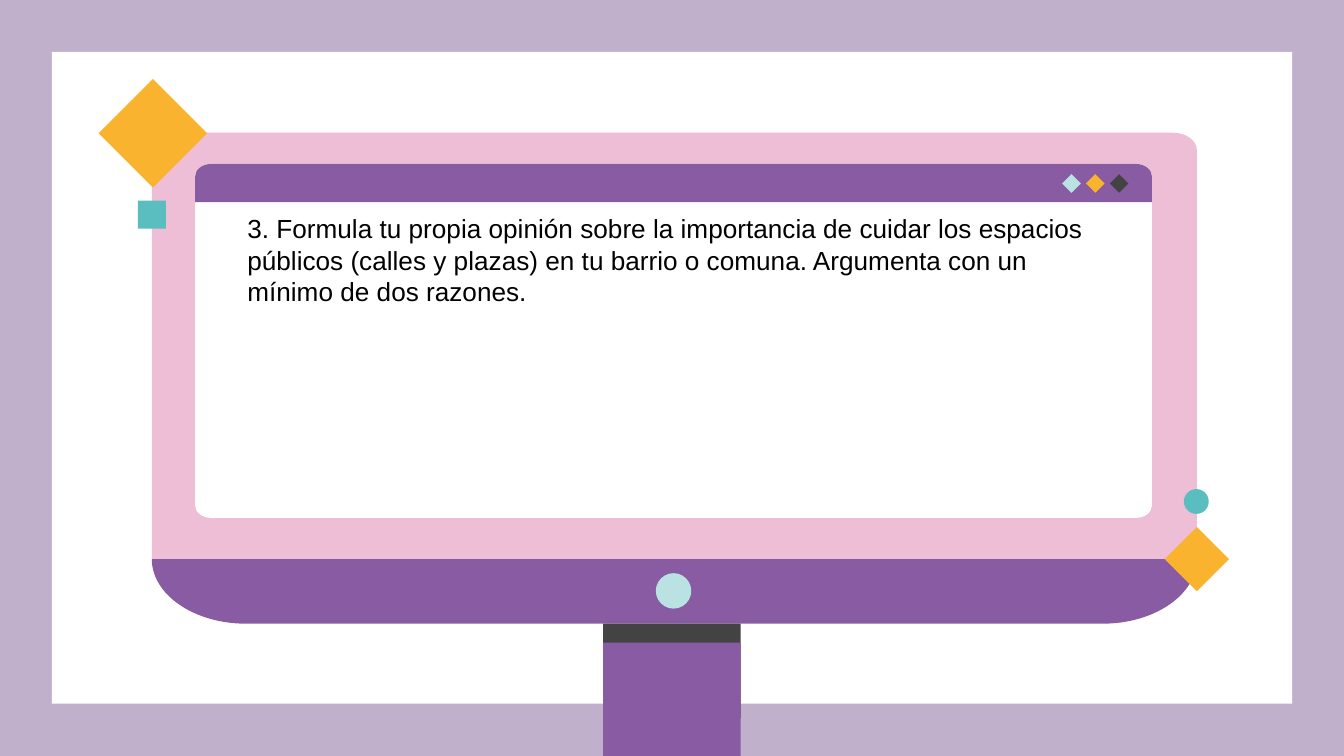
from lxml import etree
from pptx import Presentation
from pptx.dml.color import RGBColor
from pptx.enum import shapes, text
from pptx.oxml.ns import qn
from pptx.util import Cm, Pt

LILAC = RGBColor(0xC0, 0xB0, 0xCC)
WHITE = RGBColor(0xFF, 0xFF, 0xFF)
PINK = RGBColor(0xEE, 0xBD, 0xD6)
PURPLE = RGBColor(0x88, 0x5B, 0xA2)
MINT = RGBColor(0xBB, 0xE2, 0xE2)
TEAL = RGBColor(0x5A, 0xBE, 0xC0)
AMBER = RGBColor(0xFA, 0xB3, 0x2E)
DARK = RGBColor(0x43, 0x43, 0x43)
BLACK = RGBColor(0, 0, 0)
RECT = shapes.MSO_SHAPE.RECTANGLE
OVAL = shapes.MSO_SHAPE.OVAL
ARC = 0.55  # control point share for a quarter ellipse

deck = Presentation()
deck.slide_width, deck.slide_height = Cm(25.4), Cm(14.29)
slide = deck.slides.add_slide(deck.slide_layouts[5])
slide.background.fill.solid()
slide.background.fill.fore_color.rgb = LILAC


def paint(shape, color):
    shape.fill.solid()
    shape.fill.fore_color.rgb = color
    shape.line.fill.background()
    shape.shadow.inherit = False


def panel(x, y, w, h, color, rx, ry, ends):
    """Draw a box whose corners at the named ends (top, low) are elliptical."""
    dots, bends = [], {}
    for cx, cy, end in [(w, h, "low"), (0, h, "low"), (0, 0, "top"), (w, 0, "top")]:
        if end not in ends:
            dots.append((cx, cy))
            continue
        side = (cx, cy - ry if cy else ry)
        edge = (cx - rx if cx else rx, cy)
        first, last = (side, edge) if (cx > 0) == (cy > 0) else (edge, side)
        bends[len(dots)] = [(p[0] + (cx - p[0]) * ARC, p[1] + (cy - p[1]) * ARC)
                            for p in (first, last)]
        dots += [first, last]
    spots = [(Cm(x + a), Cm(y + b)) for a, b in dots]
    pen = slide.shapes.build_freeform(*spots[0])
    pen.add_line_segments(spots[1:], close=True)
    shape = pen.convert_to_shape()
    lines = list(shape._element.iter(qn("a:lnTo")))
    for spot, pulls in bends.items():
        curve = lines[spot]
        curve.tag = qn("a:cubicBezTo")
        for i, (a, b) in enumerate(pulls):
            point = etree.Element(qn("a:pt"), x=str(int(Cm(a))), y=str(int(Cm(b))))
            curve.insert(i, point)
    paint(shape, color)


def mark(kind, x, y, size, turn, color):
    """Draw a square or circle around its centre."""
    shape = slide.shapes.add_shape(
        kind, Cm(x - size / 2), Cm(y - size / 2), Cm(size), Cm(size))
    shape.rotation = turn
    paint(shape, color)


# Page and monitor
page = slide.shapes.add_shape(RECT, Cm(0.98), Cm(0.98), Cm(23.44), Cm(12.32))
paint(page, WHITE)
panel(2.87, 2.51, 19.75, 8.06, PINK, 0.45, 0.33, ["top"])
panel(2.87, 10.57, 19.75, 1.22, PURPLE, 1.78, 1.22, ["low"])
mark(OVAL, 12.73, 11.17, 0.67, 0, MINT)
panel(3.69, 3.1, 18.08, 6.69, WHITE, 0.3, 0.23, ["top", "low"])
panel(3.69, 3.1, 18.08, 0.72, PURPLE, 0.3, 0.23, ["top"])

# Stand
for top, high, color in [(11.79, 1.78, DARK), (12.15, 2.14, PURPLE)]:
    part = slide.shapes.add_shape(RECT, Cm(11.4), Cm(top), Cm(2.6), Cm(high))
    paint(part, color)

# Window buttons and ornaments
for i, color in enumerate([MINT, AMBER, DARK]):
    mark(RECT, 20.25 + 0.45 * i, 3.47, 0.25, 45, color)
mark(RECT, 2.89, 2.52, 1.45, 45, AMBER)
mark(RECT, 22.62, 10.57, 0.86, 45, AMBER)
mark(OVAL, 22.61, 9.48, 0.47, 0, TEAL)
mark(RECT, 2.87, 4.06, 0.53, 0, TEAL)

# Question, brought in front of the monitor
title = slide.shapes.title
slide.shapes._spTree.append(title._element)
title.left, title.top = Cm(4.42), Cm(3.89)
title.width, title.height = Cm(16.46), Cm(2.06)
frame = title.text_frame
frame.text = ("3. Formula tu propia opinión sobre la importancia de cuidar los "
              "espacios públicos (calles y plazas) en tu barrio o comuna. "
              "Argumenta con un mínimo de dos razones.")
frame.word_wrap = True
frame.auto_size = text.MSO_AUTO_SIZE.NONE
frame.vertical_anchor = text.MSO_ANCHOR.TOP
line = frame.paragraphs[0]
line.alignment = text.PP_ALIGN.LEFT
line.font.name, line.font.size = "Arial", Pt(14)
line.font.color.rgb = BLACK

deck.save("out.pptx")
